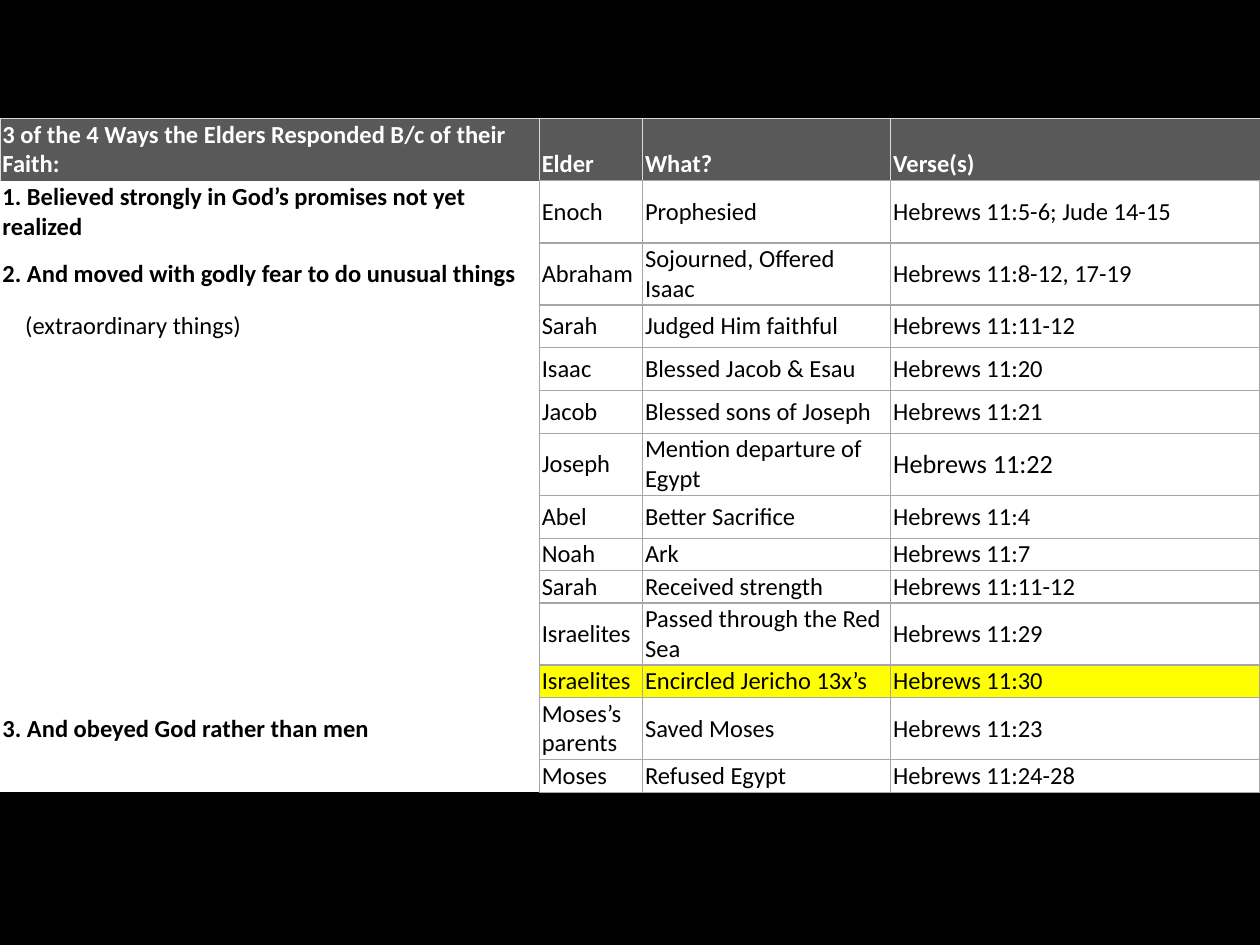
import pptx
import pptx.util
import pptx.dml.color
import pptx.enum.text
import lxml.etree
from pptx.oxml.ns import qn

RGBColor = pptx.dml.color.RGBColor
Inches = pptx.util.Inches
Pt = pptx.util.Pt
Anchor = pptx.enum.text.MSO_ANCHOR

BLACK = RGBColor(0x00, 0x00, 0x00)
WHITE = RGBColor(0xFF, 0xFF, 0xFF)
YELLOW = RGBColor(0xFF, 0xFF, 0x00)
HEADER_GRAY = RGBColor(0x59, 0x59, 0x59)
GRID_GRAY = RGBColor(0xA6, 0xA6, 0xA6)
HEADER_LINE = RGBColor(0xD9, 0xD9, 0xE3)

COLUMN_WIDTHS = [4.28, 0.82, 1.97, 2.93]
ROW_HEIGHTS = [0.47] + [0.34] * 5 + [0.47, 0.34] + [0.25] * 4 + [0.47, 0.26]
HIGHLIGHTED_ROW = 11
INDENTED_ROW = 3
LARGER_CELL = (6, 3)

ROWS = [
    ("3 of the 4 Ways the Elders Responded B/c of their Faith:", "Elder", "What?", "Verse(s)"),
    ("1. Believed strongly in God’s promises not yet realized", "Enoch", "Prophesied", "Hebrews 11:5-6; Jude 14-15"),
    ("2. And moved with godly fear to do unusual things", "Abraham", "Sojourned, Offered Isaac", "Hebrews 11:8-12, 17-19"),
    ("(extraordinary things)", "Sarah", "Judged Him faithful", "Hebrews 11:11-12"),
    ("", "Isaac", "Blessed Jacob & Esau", "Hebrews 11:20"),
    ("", "Jacob", "Blessed sons of Joseph", "Hebrews 11:21"),
    ("", "Joseph", "Mention departure of Egypt", "Hebrews 11:22"),
    ("", "Abel", "Better Sacrifice", "Hebrews 11:4"),
    ("", "Noah", "Ark", "Hebrews 11:7"),
    ("", "Sarah", "Received strength", "Hebrews 11:11-12"),
    ("", "Israelites", "Passed through the Red Sea", "Hebrews 11:29"),
    ("", "Israelites", "Encircled Jericho 13x’s", "Hebrews 11:30"),
    ("3. And obeyed God rather than men", "Moses’s parents", "Saved Moses", "Hebrews 11:23"),
    ("", "Moses", "Refused Egypt", "Hebrews 11:24-28"),
]


def add_border(cell, side, color, points):
    properties = cell._tc.get_or_add_tcPr()
    line = lxml.etree.SubElement(properties, qn("a:ln" + side), w=str(Pt(points)))
    if color is None:
        lxml.etree.SubElement(line, qn("a:noFill"))
    else:
        fill = lxml.etree.SubElement(line, qn("a:solidFill"))
        lxml.etree.SubElement(fill, qn("a:srgbClr"), val=str(color))


deck = pptx.Presentation()
deck.slide_width = Inches(10)
deck.slide_height = Inches(7.5)
page = deck.slides.add_slide(deck.slide_layouts[6])
page.background.fill.solid()
page.background.fill.fore_color.rgb = BLACK

table = page.shapes.add_table(
    len(ROWS), len(COLUMN_WIDTHS), 0, Inches(0.94),
    Inches(sum(COLUMN_WIDTHS)), Inches(sum(ROW_HEIGHTS)),
).table
table.horz_banding = False
for column, width in zip(table.columns, COLUMN_WIDTHS):
    column.width = Inches(width)
for row, height in zip(table.rows, ROW_HEIGHTS):
    row.height = Inches(height)

for row_index, texts in enumerate(ROWS):
    is_header = row_index == 0
    for column_index, text in enumerate(texts):
        is_topic = column_index == 0
        cell = table.cell(row_index, column_index)
        cell.margin_left = cell.margin_right = Inches(0.02)
        cell.margin_top = cell.margin_bottom = Inches(0.01)
        if is_topic and row_index == INDENTED_ROW:
            cell.margin_left = Inches(0.2)
        cell.vertical_anchor = Anchor.BOTTOM if is_header else Anchor.MIDDLE

        for side in "LRTB":
            if is_header and side != "B":
                add_border(cell, side, HEADER_LINE, 0.5)
            elif is_topic and side != "R":
                add_border(cell, side, None, 1)
            else:
                add_border(cell, side, GRID_GRAY, 1)

        cell.fill.solid()
        if is_header:
            cell.fill.fore_color.rgb = HEADER_GRAY
        elif row_index == HIGHLIGHTED_ROW and not is_topic:
            cell.fill.fore_color.rgb = YELLOW
        else:
            cell.fill.fore_color.rgb = WHITE

        para = cell.text_frame.paragraphs[0]
        if not text:
            lxml.etree.SubElement(para._p, qn("a:endParaRPr"), sz="1400")
            continue
        para.text = text
        font = para.runs[0].font
        font.name = "Calibri"
        font.size = Pt(15 if (row_index, column_index) == LARGER_CELL else 14)
        font.bold = is_header or (is_topic and row_index != INDENTED_ROW)
        font.color.rgb = WHITE if is_header else BLACK

deck.save("out.pptx")
